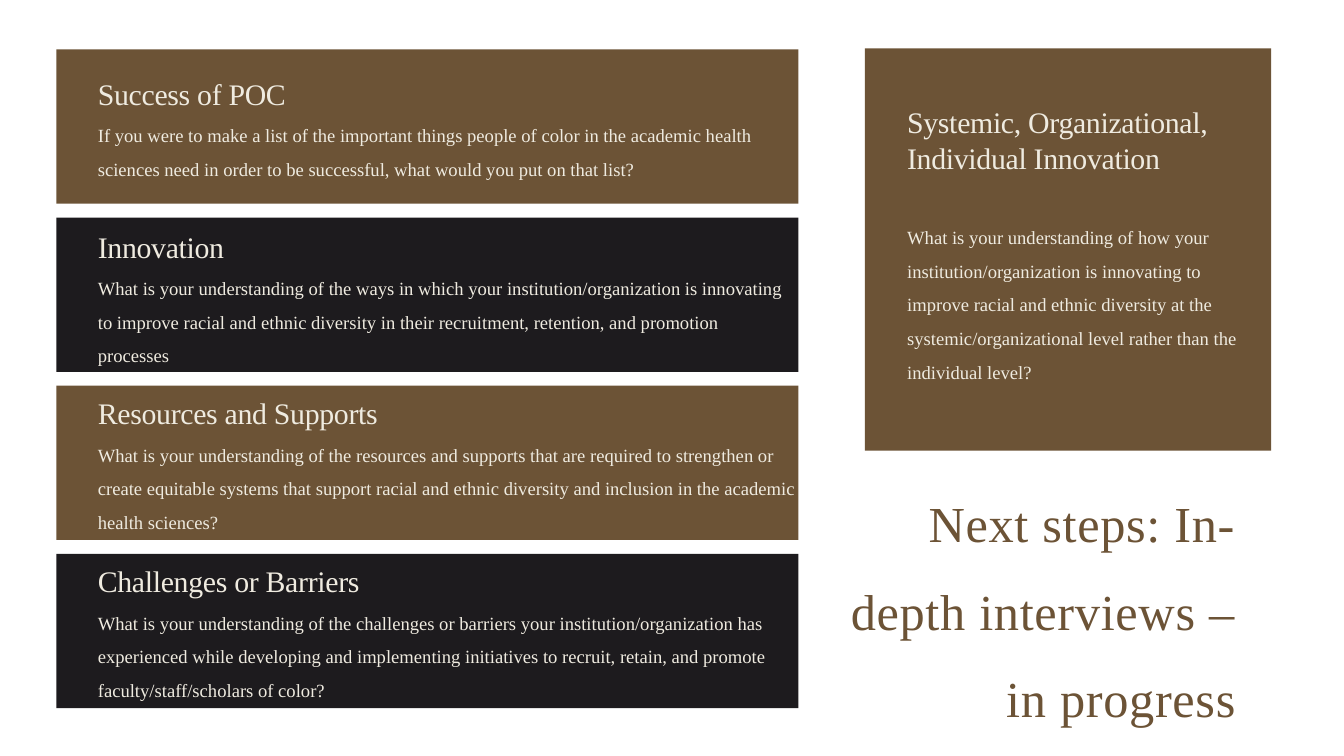
import pptx
import pptx.dml.color
import pptx.enum.shapes
import pptx.enum.text
import pptx.util

Pt = pptx.util.Pt
RGBColor = pptx.dml.color.RGBColor
Align = pptx.enum.text.PP_ALIGN

BROWN = RGBColor(0x6C, 0x53, 0x36)
BLACK = RGBColor(0x1D, 0x1B, 0x1E)
CREAM = RGBColor(0xEF, 0xEB, 0xE0)

TITLE = "Next steps: In-depth interviews – in progress"
BANNERS = [
    {"heading": "Success of POC",
     "question": "If you were to make a list of the important things people of color in the "
                 "academic health sciences need in order to be successful, what would you put "
                 "on that list?",
     "fill": BROWN, "inset": 18.7, "width": 499.7, "height": 45.4},
    {"heading": "Innovation",
     "question": "What is your understanding of the ways in which your institution/organization "
                 "is innovating to improve racial and ethnic diversity in their recruitment, "
                 "retention, and promotion processes",
     "fill": BLACK, "inset": 7.7, "width": 490.3, "height": 69.8},
    {"heading": "Resources and Supports",
     "question": "What is your understanding of the resources and supports that are required to "
                 "strengthen or create equitable systems that support racial and ethnic "
                 "diversity and inclusion in the academic health sciences?",
     "fill": BROWN, "inset": 6.5, "width": 499.7, "height": 69.8},
    {"heading": "Challenges or Barriers",
     "question": "What is your understanding of the challenges or barriers your "
                 "institution/organization has experienced while developing and implementing "
                 "initiatives to recruit, retain, and promote faculty/staff/scholars of color?",
     "fill": BLACK, "inset": 6.5, "width": 499.7, "height": 69.8},
]
PANEL_HEADING = "Systemic, Organizational, Individual Innovation"
PANEL_QUESTION = ("What is your understanding of how your institution/organization is innovating "
                  "to improve racial and ethnic diversity at the systemic/organizational level "
                  "rather than the individual level?")

TITLE_STYLE = {"size": 36, "color": BROWN, "leading": 62.4, "spacing": 50, "align": Align.RIGHT}
HEADING_STYLE = {"size": 21.3, "color": CREAM, "leading": 25.6, "spacing": -20, "align": Align.LEFT}
QUESTION_STYLE = {"size": 13.3, "color": CREAM, "leading": 24, "spacing": 0, "align": Align.LEFT}

BANNER_LEFT, BANNER_TOP, BANNER_WIDTH, BANNER_HEIGHT = 40.3, 35.3, 530, 110.2
BANNER_STEP = 120.1
TEXT_LEFT = 69.9
HEADING_WIDTH, HEADING_HEIGHT = 470, 25.2
QUESTION_DROP = 26.7


def set_all(target, values):
    for name, value in values.items():
        setattr(target, name, value)


def write(box, text, style):
    frame = box.text_frame
    set_all(frame, {"margin_left": 0, "margin_top": 0, "margin_right": 0, "margin_bottom": 0,
                    "word_wrap": True, "auto_size": pptx.enum.text.MSO_AUTO_SIZE.NONE,
                    "vertical_anchor": pptx.enum.text.MSO_ANCHOR.TOP})
    para = frame.paragraphs[0]
    set_all(para, {"alignment": style["align"], "line_spacing": Pt(style["leading"]),
                   "space_before": Pt(0)})
    span = para.add_run()
    span.text = text
    set_all(span.font, {"name": "Times New Roman", "size": Pt(style["size"])})
    span.font.color.rgb = style["color"]
    span._r.get_or_add_rPr().set("spc", str(style["spacing"]))


def add_text(page, text, style, *place):
    write(page.shapes.add_textbox(*map(Pt, place)), text, style)


def add_block(page, color, *place):
    block = page.shapes.add_shape(pptx.enum.shapes.MSO_SHAPE.RECTANGLE, *map(Pt, place))
    block.shadow.inherit = False
    block.fill.solid()
    block.fill.fore_color.rgb = color
    block.line.fill.background()


def main():
    deck = pptx.Presentation()
    set_all(deck, {"slide_width": Pt(960), "slide_height": Pt(540)})
    page = deck.slides.add_slide(deck.slide_layouts[5])

    title = page.shapes.title
    set_all(title, {"left": Pt(592.6), "top": Pt(332.6), "width": Pt(290.2), "height": Pt(181.4)})
    write(title, TITLE, TITLE_STYLE)

    for row, banner in enumerate(BANNERS):
        top = BANNER_TOP + row * BANNER_STEP
        heading_top = top + banner["inset"]
        add_block(page, banner["fill"], BANNER_LEFT, top, BANNER_WIDTH, BANNER_HEIGHT)
        add_text(page, banner["heading"], HEADING_STYLE,
                 TEXT_LEFT, heading_top, HEADING_WIDTH, HEADING_HEIGHT)
        add_text(page, banner["question"], QUESTION_STYLE,
                 TEXT_LEFT, heading_top + QUESTION_DROP, banner["width"], banner["height"])

    add_block(page, BROWN, 617.8, 34.6, 290.2, 287.3)
    add_text(page, PANEL_HEADING, HEADING_STYLE, 648, 74.2, 257, 77.8)
    add_text(page, PANEL_QUESTION, QUESTION_STYLE, 648, 153.4, 257, 118)

    deck.save("out.pptx")


if __name__ == "__main__":
    main()
